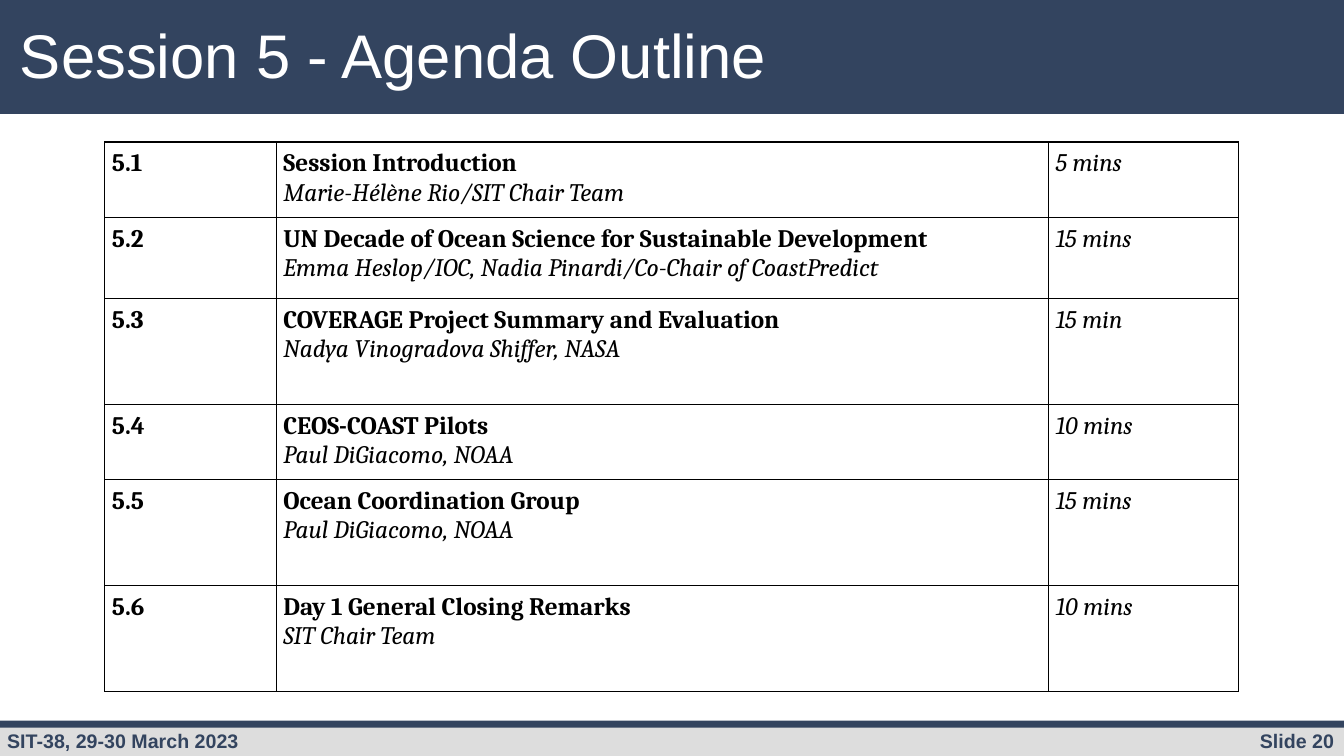
from pptx import Presentation
from pptx.dml.color import RGBColor
from pptx.enum.shapes import MSO_SHAPE as Shape
from pptx.enum.text import MSO_ANCHOR as Anchor, MSO_AUTO_SIZE as Fit, PP_ALIGN as Align
from pptx.oxml import parse_xml
from pptx.oxml.ns import nsdecls
from pptx.util import Cm, Pt

NAVY = RGBColor(0x33, 0x44, 0x5F)
GREY = RGBColor(0xDD, 0xDD, 0xDD)
WHITE = RGBColor(0xFF, 0xFF, 0xFF)
BLACK = RGBColor(0, 0, 0)

WIDE, HIGH = 33.87, 19.05
HEAD = {"name": "Arial", "size": Pt(44), "bold": False, "color": WHITE}
FOOT = {"name": "Arial", "size": Pt(14), "bold": True, "color": NAVY}
BODY = {"name": "Cambria", "size": Pt(18), "color": BLACK}
BOLD = BODY | {"bold": True, "italic": False}
ITALIC = BODY | {"bold": False, "italic": True}

COLS = (4.32, 19.46, 4.8)
AGENDA = (
    (1.9, "5.1", "Session Introduction", "Marie-Hélène Rio/SIT Chair Team", "5 mins"),
    (2.04, "5.2", "UN Decade of Ocean Science for Sustainable Development",
     "Emma Heslop/IOC, Nadia Pinardi/Co-Chair of CoastPredict", "15 mins"),
    (2.67, "5.3", "COVERAGE Project Summary and Evaluation",
     "Nadya Vinogradova Shiffer, NASA", "15 min"),
    (1.9, "5.4", "CEOS-COAST Pilots", "Paul DiGiacomo, NOAA", "10 mins"),
    (2.67, "5.5", "Ocean Coordination Group", "Paul DiGiacomo, NOAA", "15 mins"),
    (2.67, "5.6", "Day 1 General Closing Remarks", "SIT Chair Team", "10 mins"),
)


def style(font, form):
    for key, value in form.items():
        if key == "color":
            font.color.rgb = value
        else:
            setattr(font, key, value)


def write(frame, *lines):
    """Fill a text frame with one paragraph per (text, format) pair."""
    for i, (text, form) in enumerate(lines):
        para = frame.add_paragraph() if i else frame.paragraphs[0]
        run = para.add_run()
        run.text = text
        style(run.font, form)


def add_bar(slide, box, color):
    bar = slide.shapes.add_shape(Shape.RECTANGLE, *map(Cm, box))
    bar.shadow.inherit = False
    bar.fill.solid()
    bar.fill.fore_color.rgb = color
    bar.line.fill.background()


def add_header(slide, box, text):
    left, top, width, height = box
    add_bar(slide, box, NAVY)
    title = slide.shapes.title
    spot = {"left": left + 0.25, "top": top + 0.28, "width": width - 0.5, "height": height - 0.74}
    for key, value in spot.items():
        setattr(title, key, Cm(value))
    frame = title.text_frame
    frame.auto_size = Fit.NONE
    frame.vertical_anchor = Anchor.MIDDLE
    write(frame, (text, HEAD))
    frame.paragraphs[0].alignment = Align.LEFT
    slide.shapes._spTree.append(title._element)  # bring in front of the bar


def add_footer(slide, box, event, page):
    left, top, width, height = box
    add_bar(slide, box, GREY)
    add_bar(slide, (left, top - 0.1, width, 0.18), NAVY)
    half = width / 2
    for x, text, side in ((left, event, Align.LEFT), (left + half, page, Align.RIGHT)):
        note = slide.shapes.add_textbox(*map(Cm, (x, top, half, height)))
        frame = note.text_frame
        frame.word_wrap = True
        frame.margin_left, frame.margin_right = Cm(0.18), Cm(0.25)
        frame.margin_top = frame.margin_bottom = Cm(0.1)
        write(frame, (text, FOOT))
        frame.paragraphs[0].alignment = side


def add_cell(cell, *lines):
    """Set the text, margins and border of one table cell."""
    for side in ("left", "right", "top", "bottom"):
        setattr(cell, f"margin_{side}", Cm(0.18))
    write(cell.text_frame, *lines)
    props = cell._tc.get_or_add_tcPr()
    for side in "LRTB":
        props.append(parse_xml(
            f'<a:ln{side} {nsdecls("a")} w="{Pt(1)}"><a:solidFill>'
            f'<a:srgbClr val="{BLACK}"/></a:solidFill></a:ln{side}>'))
    cell.fill.background()


def add_agenda(slide, left, top):
    high = sum(item[0] for item in AGENDA)
    size = map(Cm, (left, top, sum(COLS), high))
    table = slide.shapes.add_table(len(AGENDA), len(COLS), *size).table
    table.first_row = table.horz_banding = False
    for col, width in zip(table.columns, COLS):
        col.width = Cm(width)
    for row, (height, code, topic, host, time) in zip(table.rows, AGENDA):
        row.height = Cm(height)
        add_cell(row.cells[0], (code, BOLD))
        add_cell(row.cells[1], (topic, BOLD), (host, ITALIC))
        add_cell(row.cells[2], (time, ITALIC))


def main():
    deck = Presentation()
    deck.slide_width, deck.slide_height = Cm(WIDE), Cm(HIGH)
    slide = deck.slides.add_slide(deck.slide_layouts[5])
    add_header(slide, (0, 0, WIDE, 2.87), "Session 5 - Agenda Outline")
    add_footer(slide, (0, 18.26, WIDE, 0.79), "SIT-38, 29-30 March 2023", "Slide 20")
    add_agenda(slide, 2.64, 3.58)
    deck.save("out.pptx")


if __name__ == "__main__":
    main()
